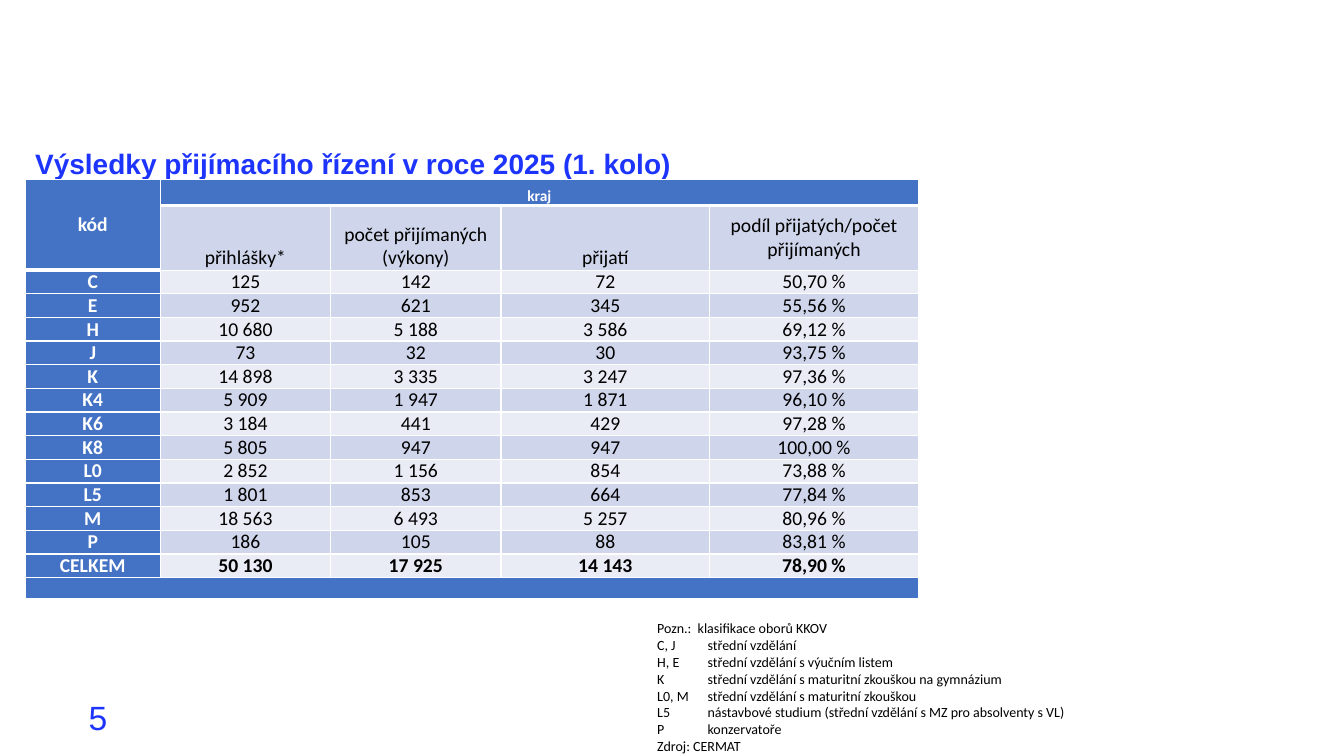
"""Build the slide with the 2025 admission results table."""
import pptx
import pptx.dml.color
import pptx.enum.text
import pptx.util
from lxml import etree
from pptx.oxml.ns import qn

Inches = pptx.util.Inches
Pt = pptx.util.Pt
Align = pptx.enum.text.PP_ALIGN
Anchor = pptx.enum.text.MSO_ANCHOR
COLORS = {"title": "1D34FD", "head": "4472C4", "dark": "CFD5EA",
          "light": "E9EBF5", "white": "FFFFFF", "black": "000000"}


def add_run(para, text, size, color, bold=False, face="Calibri"):
    run = para.add_run()
    run.text = text
    run.font.size = Pt(size)
    run.font.name = face
    run.font.bold = bold
    run.font.color.rgb = pptx.dml.color.RGBColor.from_string(COLORS[color])


def add_box(left, top, width, height, anchor):
    frame = slide.shapes.add_textbox(
        Inches(left), Inches(top), Inches(width), Inches(height)).text_frame
    frame.word_wrap = True
    frame.vertical_anchor = anchor
    return frame


deck = pptx.Presentation()
deck.slide_width = Inches(13.33)
deck.slide_height = Inches(7.5)
slide = deck.slides.add_slide(deck.slide_layouts[6])

number = add_box(0.78, 6.91, 3, 0.4, Anchor.MIDDLE).paragraphs[0]
add_run(number, "5", 24, "title", face="Arial")

title = add_box(0.25, 1.28, 11.96, 0.73, Anchor.MIDDLE).paragraphs[0]
title.line_spacing = 0.9
add_run(title, "Výsledky přijímacího řízení v roce 2025 (1. kolo)", 20, "title", True, "Arial")

notes = [
    "Pozn.:  klasifikace oborů KKOV",
    "C, J\tstřední vzdělání",
    "H, E\tstřední vzdělání s výučním listem",
    "K\tstřední vzdělání s maturitní zkouškou na gymnázium",
    "L0, M\tstřední vzdělání s maturitní zkouškou",
    "L5\tnástavbové studium (střední vzdělání s MZ pro absolventy s VL)",
    "P\tkonzervatoře",
    "Zdroj: CERMAT",
]
frame = add_box(6.42, 6.1, 5.19, 1.45, Anchor.TOP)
for i, note in enumerate(notes):
    para = frame.add_paragraph() if i else frame.paragraphs[0]
    add_run(para, note, 10, "black")

rows = [
    ["kód", "kraj", "", "", ""],
    ["", "přihlášky*", "počet přijímaných (výkony)", "přijatí",
     "podíl přijatých/počet přijímaných"],
    ["C", "125", "142", "72", "50,70 %"],
    ["E", "952", "621", "345", "55,56 %"],
    ["H", "10 680", "5 188", "3 586", "69,12 %"],
    ["J", "73", "32", "30", "93,75 %"],
    ["K", "14 898", "3 335", "3 247", "97,36 %"],
    ["K4", "5 909", "1 947", "1 871", "96,10 %"],
    ["K6", "3 184", "441", "429", "97,28 %"],
    ["K8", "5 805", "947", "947", "100,00 %"],
    ["L0", "2 852", "1 156", "854", "73,88 %"],
    ["L5", "1 801", "853", "664", "77,84 %"],
    ["M", "18 563", "6 493", "5 257", "80,96 %"],
    ["P", "186", "105", "88", "83,81 %"],
    ["CELKEM", "50 130", "17 925", "14 143", "78,90 %"],
    ["", "", "", "", ""],
]
widths = [1.34, 1.69, 1.69, 2.07, 2.07]
heights = [0.26, 0.64] + [0.235] * 13 + [0.21]
last = len(rows) - 1
table = slide.shapes.add_table(
    len(rows), len(widths), Inches(0.25), Inches(1.78),
    Inches(sum(widths)), Inches(sum(heights))).table
for col, width in zip(table.columns, widths):
    col.width = Inches(width)
for row, height in zip(table.rows, heights):
    row.height = Inches(height)

for r, row in enumerate(rows):
    for c, text in enumerate(row):
        cell = table.cell(r, c)
        head = c == 0 or r in (0, last)
        cell.margin_left = cell.margin_right = Inches(0.04)
        cell.margin_top = cell.margin_bottom = 0
        middle = (r, c) in ((0, 0), (1, 4))
        cell.vertical_anchor = Anchor.MIDDLE if middle else Anchor.BOTTOM
        props = cell._tc.get_or_add_tcPr()
        for side in "LRTB":
            thick = (side == "B" and (r == 0 or (r, c) == (1, 0))
                     or side == "T" and (r == 1 and c > 0 or (r, c) == (2, 0)))
            line = etree.SubElement(props, qn(f"a:ln{side}"), w=str(Pt(3 if thick else 1)))
            fill = etree.SubElement(line, qn("a:solidFill"))
            etree.SubElement(fill, qn("a:srgbClr"), val=COLORS["white"])
        shade = "head" if head else "dark" if r % 2 else "light"
        cell.fill.solid()
        cell.fill.fore_color.rgb = pptx.dml.color.RGBColor.from_string(COLORS[shade])
        para = cell.text_frame.paragraphs[0]
        para.alignment = Align.CENTER
        if text:
            add_run(para, text, 11 if text == "kraj" else 14,
                    "white" if head else "black", head or r == last - 1)
        else:
            etree.SubElement(para._p, qn("a:endParaRPr"), sz="1100")

table.cell(0, 0).merge(table.cell(1, 0))
table.cell(0, 1).merge(table.cell(0, 4))
table.cell(last, 0).merge(table.cell(last, 4))

deck.save("out.pptx")
